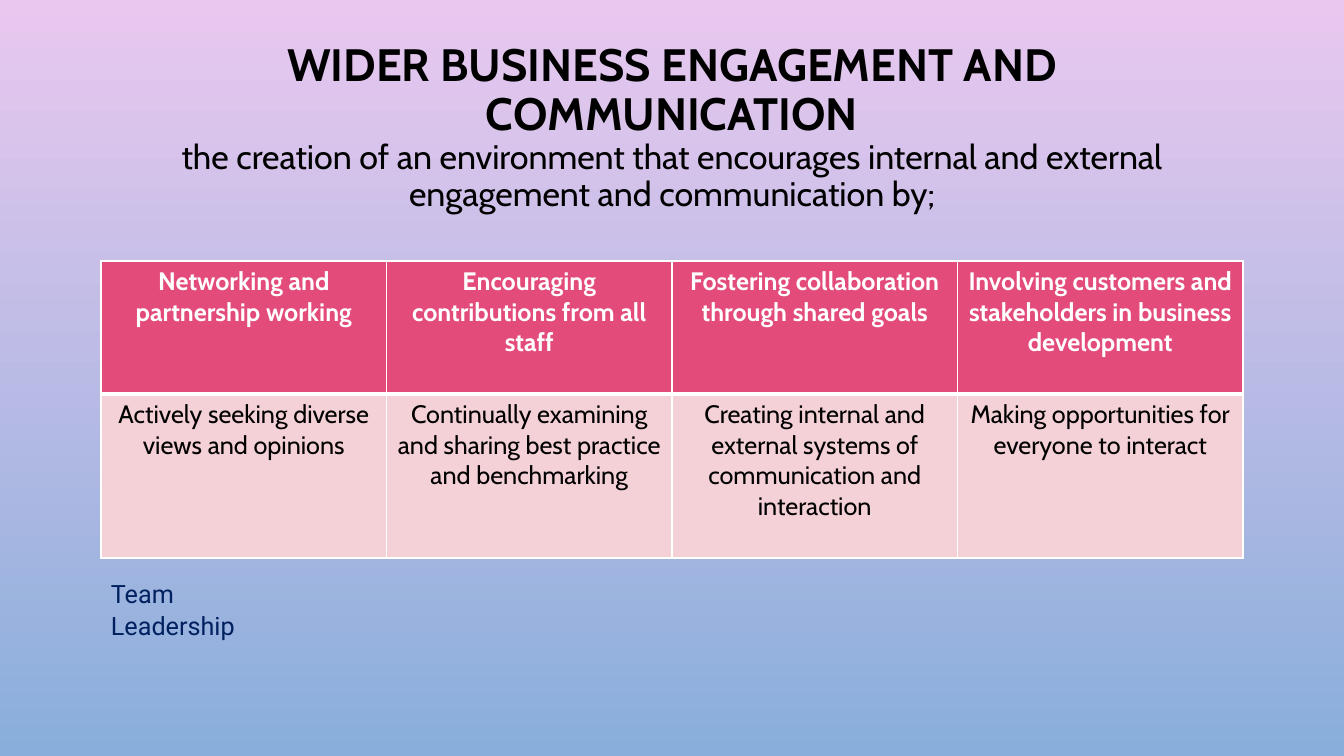
from lxml import etree
from pptx import Presentation
from pptx import util as u
from pptx.dml.color import RGBColor
from pptx.enum import text
from pptx.oxml.ns import qn

# Content
TITLE = "WIDER BUSINESS ENGAGEMENT AND COMMUNICATION"
SUBTITLE = ("the creation of an environment that encourages internal and external "
            "engagement and communication by;")
TABLE_ROWS = [
    ["Networking and partnership working",
     "Encouraging contributions from all staff",
     "Fostering collaboration through shared goals",
     "Involving customers and stakeholders in business development"],
    ["Actively seeking diverse views and opinions",
     "Continually examining and sharing best practice and benchmarking",
     "Creating internal and external systems of communication and interaction",
     "Making opportunities for everyone to interact"],
]
FOOTER = "Team\vLeadership"

# Colours
BLACK = RGBColor(0x00, 0x00, 0x00)
WHITE = RGBColor(0xFF, 0xFF, 0xFF)
NAVY = RGBColor(0x00, 0x20, 0x60)
ROSE = RGBColor(0xE3, 0x4B, 0x7A)
BLUSH = RGBColor(0xF4, 0xD0, 0xD7)
BACKGROUND = [RGBColor(0xE9, 0xC8, 0xEF), RGBColor(0x89, 0xAE, 0xDB)]

# Row formats: height in px, fill, font colour, bold, bottom border in pt
ROW_FORMATS = [(133, ROSE, WHITE, True, 3), (164, BLUSH, BLACK, False, 1)]


def px(value):
    return u.Emu(round(value * 914400 / 100.8))


def write(paragraph, words, font, color, **formats):
    paragraph.text = words
    for name, value in {"name": font, **formats}.items():
        setattr(paragraph.font, name, value)
    paragraph.font.color.rgb = color


def add_text_frame(slide, box, **formats):
    frame = slide.shapes.add_textbox(*map(px, box)).text_frame
    for name, value in formats.items():
        setattr(frame, name, value)
    return frame


def add_borders(cell, widths):
    properties = cell._tc.get_or_add_tcPr()
    for side, width in widths.items():
        line = etree.SubElement(properties, qn(f"a:ln{side}"), w=str(u.Pt(width)))
        fill = etree.SubElement(line, qn("a:solidFill"))
        etree.SubElement(fill, qn("a:srgbClr"), val=str(WHITE))


def add_title(slide):
    frame = add_text_frame(slide, (101, 42, 1142, 172), word_wrap=True,
                           margin_top=0, margin_bottom=0,
                           vertical_anchor=text.MSO_ANCHOR.MIDDLE)
    heading, subheading = frame.paragraphs[0], frame.add_paragraph()
    write(heading, TITLE, "Cabin", BLACK, size=u.Pt(32.4), bold=True)
    write(subheading, SUBTITLE, "Cabin", BLACK, size=u.Pt(24.3), bold=False)
    for paragraph in frame.paragraphs:
        paragraph.alignment = text.PP_ALIGN.CENTER
        paragraph.line_spacing = 0.9


def add_engagement_table(slide):
    height = sum(row_format[0] for row_format in ROW_FORMATS)
    table = slide.shapes.add_table(len(TABLE_ROWS), len(TABLE_ROWS[0]),
                                   *map(px, (101, 261, 1142, height))).table
    table.horz_banding = False
    top = 1
    for r, (words, row_format) in enumerate(zip(TABLE_ROWS, ROW_FORMATS)):
        row_height, fill, color, bold, bottom = row_format
        table.rows[r].height = px(row_height)
        for cell, label in zip(table.rows[r].cells, words):
            add_borders(cell, {"L": 1, "R": 1, "T": top, "B": bottom})
            cell.fill.solid()
            cell.fill.fore_color.rgb = fill
            paragraph = cell.text_frame.paragraphs[0]
            write(paragraph, label, "Cabin", color, size=u.Pt(18), bold=bold)
            paragraph.alignment = text.PP_ALIGN.CENTER
        top = bottom


def add_footer(slide):
    frame = add_text_frame(slide, (101, 571, 196, 75), word_wrap=True)
    paragraph = frame.paragraphs[0]
    write(paragraph, FOOTER, "Roboto", NAVY, size=u.Pt(18))
    paragraph.line_spacing = 1.07
    paragraph.space_after = u.Pt(8)


def main():
    presentation = Presentation()
    presentation.slide_width, presentation.slide_height = px(1344), px(756)
    slide = presentation.slides.add_slide(presentation.slide_layouts[6])

    # Background gradient, top to bottom
    background = slide.background.fill
    background.gradient()
    background.gradient_angle = 270
    for position, (stop, color) in enumerate(zip(background.gradient_stops, BACKGROUND)):
        stop.color.rgb = color
        stop.position = position

    add_title(slide)
    add_engagement_table(slide)
    add_footer(slide)
    presentation.save("out.pptx")


if __name__ == "__main__":
    main()
